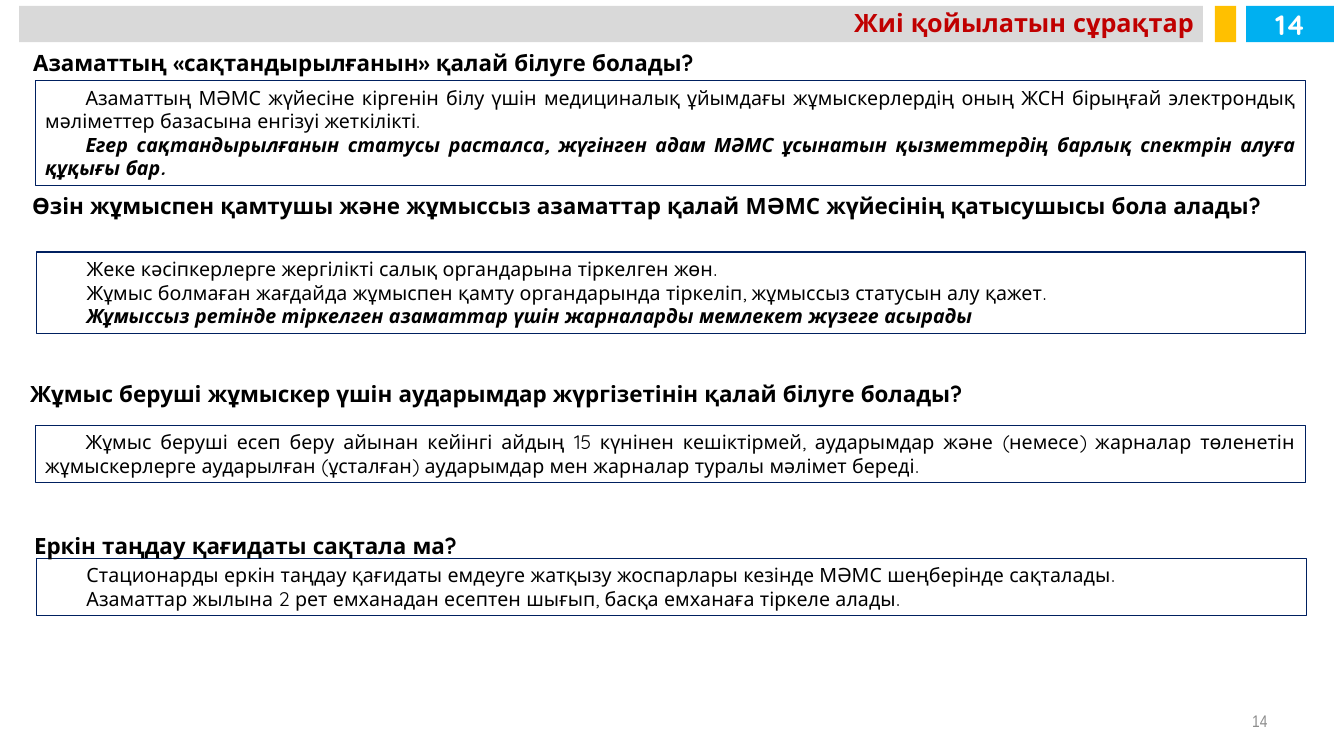
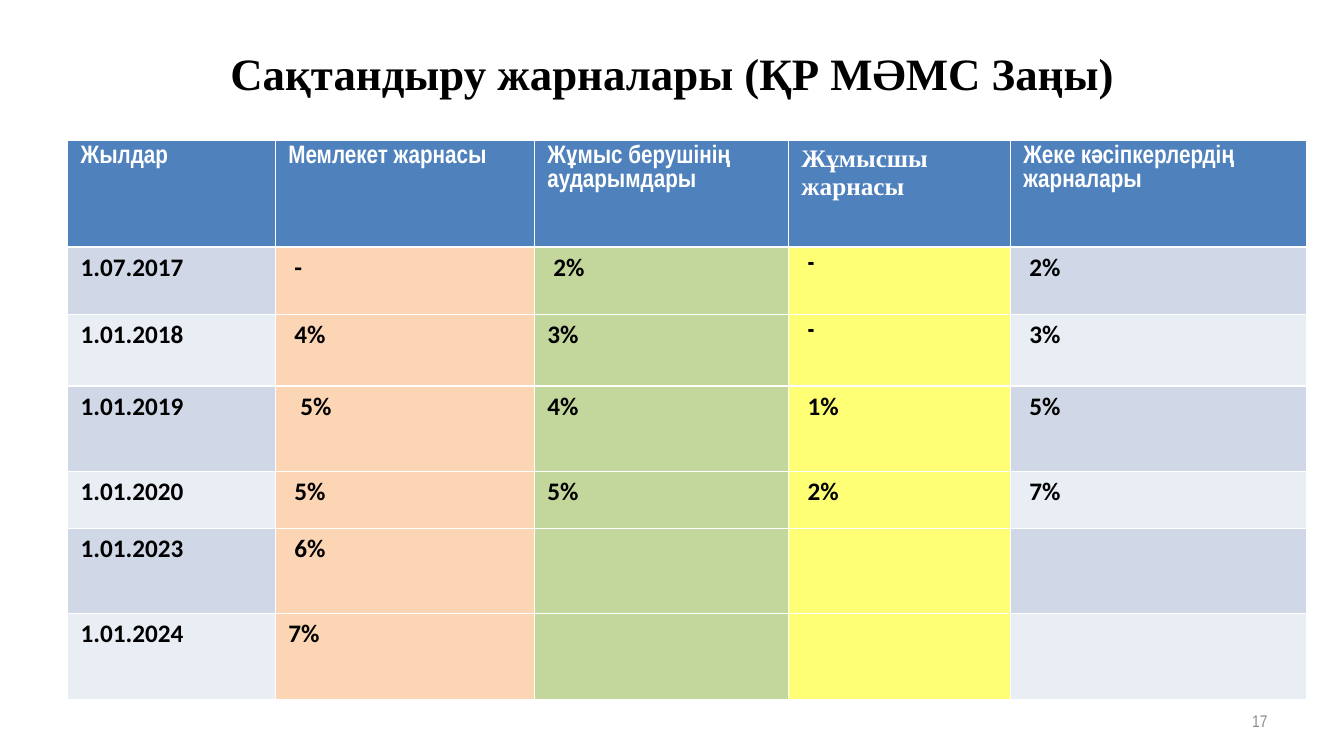
"""Build two slides on health insurance: common questions and contribution rates."""
from pptx import Presentation
from pptx import util as u
from pptx.dml import color
from pptx.enum import shapes, text

BLACK = color.RGBColor(0x00, 0x00, 0x00)
WHITE = color.RGBColor(0xFF, 0xFF, 0xFF)
GREY = color.RGBColor(0xD9, 0xD9, 0xD9)
FOOTER_GREY = color.RGBColor(0x8C, 0x8C, 0x8C)
GOLD = color.RGBColor(0xFF, 0xC0, 0x00)
SKY = color.RGBColor(0x00, 0xB0, 0xF0)
RED = color.RGBColor(0xC0, 0x00, 0x00)
NAVY = color.RGBColor(0x00, 0x20, 0x60)
HEADER_BLUE = color.RGBColor(0x4F, 0x81, 0xBD)
BANDS = [color.RGBColor(0xD0, 0xD8, 0xE8), color.RGBColor(0xE9, 0xED, 0xF4)]
COLUMN_FILLS = {1: color.RGBColor(0xFC, 0xD5, 0xB5),
                2: color.RGBColor(0xC3, 0xD6, 0x9B),
                3: color.RGBColor(0xFF, 0xFF, 0x75)}

BODY, NARROW, SERIF, SANS = "Quicksand", "Arial Narrow", "Times New Roman", "Calibri"
LEFT, CENTER, RIGHT, JUSTIFY = (text.PP_ALIGN.LEFT, text.PP_ALIGN.CENTER,
                                text.PP_ALIGN.RIGHT, text.PP_ALIGN.JUSTIFY)
TOP, MIDDLE = text.MSO_ANCHOR.TOP, text.MSO_ANCHOR.MIDDLE


def add_box(s, at, fill=None, line=None):
    sp = s.shapes.add_shape(shapes.MSO_SHAPE.RECTANGLE, *map(u.Inches, at))
    sp.shadow.inherit = False
    if fill is None:
        sp.fill.background()
    else:
        sp.fill.solid()
        sp.fill.fore_color.rgb = fill
    if line is None:
        sp.line.fill.background()
    else:
        sp.line.color.rgb = line
        sp.line.width = u.Pt(0.75)
    return sp


def write(tf, content, size=14, font=BODY, rgb=BLACK, bold=False, align=LEFT,
          anchor=TOP, indent=0, spacing=None, before=0, strong_last=False):
    lines = [content] if isinstance(content, str) else content
    tf.word_wrap = True
    tf.vertical_anchor = anchor
    for i, line in enumerate(lines):
        p = tf.add_paragraph() if i else tf.paragraphs[0]
        p.alignment = align
        p.space_before = u.Pt(before)
        if spacing:
            p.line_spacing = spacing
        if indent:
            p._p.get_or_add_pPr().set("indent", str(u.Inches(indent)))
        strong = strong_last and i == len(lines) - 1
        r = p.add_run()
        r.text = line
        r.font.size = u.Pt(size)
        r.font.name = font
        r.font.color.rgb = rgb
        r.font.bold = bold or strong
        r.font.italic = strong


prs = Presentation()
prs.slide_width, prs.slide_height = u.Inches(13.33), u.Inches(7.5)
questions_slide, rates_slide = [prs.slides.add_slide(prs.slide_layouts[6]) for _ in range(2)]

for at, fill in [((0.19, 0.06, 11.74, 0.36), GREY),
                 ((12.05, 0.06, 0.21, 0.36), GOLD),
                 ((12.36, 0.06, 0.87, 0.36), SKY)]:
    add_box(questions_slide, at, fill=fill)

questions = [
    ((0.23, 0.44, 12.22, 0.37), "Азаматтың «сақтандырылғанын» қалай білуге болады?",
     (0.35, 0.8, 12.6, 1.04),
     ["Азаматтың МӘМС жүйесіне кіргенін білу үшін медициналық ұйымдағы жұмыскерлердің "
      "оның ЖСН бірыңғай электрондық мәліметтер базасына енгізуі жеткілікті.",
      "Егер сақтандырылғанын статусы расталса, жүгінген адам МӘМС ұсынатын "
      "қызметтердің барлық спектрін алуға құқығы бар."], True),
    ((0.22, 1.86, 12.85, 0.37),
     "Өзін жұмыспен қамтушы және жұмыссыз азаматтар қалай МӘМС жүйесінің қатысушысы бола алады?",
     (0.36, 2.5, 12.59, 0.81),
     ["Жеке кәсіпкерлерге жергілікті салық органдарына тіркелген жөн.",
      "Жұмыс болмаған жағдайда жұмыспен қамту органдарында тіркеліп, жұмыссыз статусын алу қажет.",
      "Жұмыссыз ретінде тіркелген азаматтар үшін жарналарды мемлекет жүзеге асырады"], True),
    ((0.2, 3.72, 12.64, 0.37),
     "Жұмыс беруші жұмыскер үшін аударымдар жүргізетінін қалай білуге болады?",
     (0.35, 4.22, 12.6, 0.57),
     ["Жұмыс беруші есеп беру айынан кейінгі айдың 15 күнінен кешіктірмей, аударымдар және "
      "(немесе) жарналар төленетін жұмыскерлерге аударылған (ұсталған) аударымдар мен "
      "жарналар туралы мәлімет береді."], False),
    ((0.24, 5.23, 12.64, 0.37), "Еркін таңдау қағидаты сақтала ма?",
     (0.36, 5.54, 12.6, 0.57),
     ["Стационарды еркін таңдау қағидаты емдеуге жатқызу жоспарлары кезінде МӘМС "
      "шеңберінде сақталады.",
      "Азаматтар жылына 2 рет емханадан есептен шығып, басқа емханаға тіркеле алады."], False),
]
for _, _, answer_at, answer, strong_last in questions:
    sp = add_box(questions_slide, answer_at, line=NAVY)
    write(sp.text_frame, answer, align=JUSTIFY, indent=0.4, strong_last=strong_last)

labels = [
    (questions_slide, (0.32, 0.08, 11.62, 0.34), "Жиі қойылатын сұрақтар",
     dict(size=18, rgb=RED, bold=True, align=RIGHT, spacing=0.8)),
    (questions_slide, (12.42, 0.06, 0.76, 0.36), "14",
     dict(size=20, rgb=WHITE, bold=True, align=CENTER, anchor=MIDDLE)),
    (rates_slide, (0.67, 0.3, 12, 0.85), "Сақтандыру жарналары (ҚР МӘМС Заңы)",
     dict(size=32, font=SERIF, bold=True, align=CENTER, anchor=MIDDLE)),
]
labels += [(questions_slide, at, question, dict(size=16, bold=True))
           for at, question, *_ in questions]
labels += [(s, (9.56, 6.95, 3.11, 0.4), number,
            dict(size=12, font=NARROW, rgb=FOOTER_GREY, align=RIGHT, anchor=MIDDLE))
           for s, number in [(questions_slide, "14"), (rates_slide, "17")]]
for s, at, label, style in labels:
    write(s.shapes.add_textbox(*map(u.Inches, at)).text_frame, label, **style)

rates = [
    ["Жылдар", "Мемлекет жарнасы", "Жұмыс берушінің аударымдары",
     "Жұмысшы жарнасы", "Жеке кәсіпкерлердің жарналары"],
    ["1.07.2017", "-", "2%", "-", "2%"],
    ["1.01.2018", "4%", "3%", "-", "3%"],
    ["1.01.2019", "5%", "4%", "1%", "5%"],
    ["1.01.2020", "5%", "5%", "2%", "7%"],
    ["1.01.2023", "6%", "", "", ""],
    ["1.01.2024", "7%", "", "", ""],
]
column_insets = [0.13, 0.19, 0.13, 0.19, 0.19]
cell_insets = {(1, 2): 0.19, (3, 1): 0.25, (6, 1): 0.13}
column_widths = [2.06, 2.57, 2.52, 2.2, 2.94]
row_heights = [1.06, 0.67, 0.71, 0.85, 0.56, 0.85, 0.85]

table = rates_slide.shapes.add_table(
    len(rates), len(column_widths), u.Inches(0.67), u.Inches(1.39),
    u.Inches(sum(column_widths)), u.Inches(sum(row_heights))).table
table.horz_banding = False
for column, width in zip(table.columns, column_widths):
    column.width = u.Inches(width)
for row, height in zip(table.rows, row_heights):
    row.height = u.Inches(height)

for i, values in enumerate(rates):
    for j, value in enumerate(values):
        cell = table.cell(i, j)
        header = i == 0
        inset = 0.13 if header else cell_insets.get((i, j), column_insets[j])
        cell.margin_left, cell.margin_right = u.Inches(inset), u.Inches(0.13)
        cell.fill.solid()
        cell.fill.fore_color.rgb = (HEADER_BLUE if header
                                    else COLUMN_FILLS.get(j, BANDS[(i - 1) % 2]))
        if not value:
            continue
        if header:
            font = SERIF if j == 3 else NARROW
        else:
            font = NARROW if j == 3 and value == "-" else SANS
        write(cell.text_frame, value, size=18, font=font, bold=True,
              rgb=WHITE if header else BLACK, before=3.5 if (i, j) == (0, 1) else 0)

prs.save("out.pptx")
